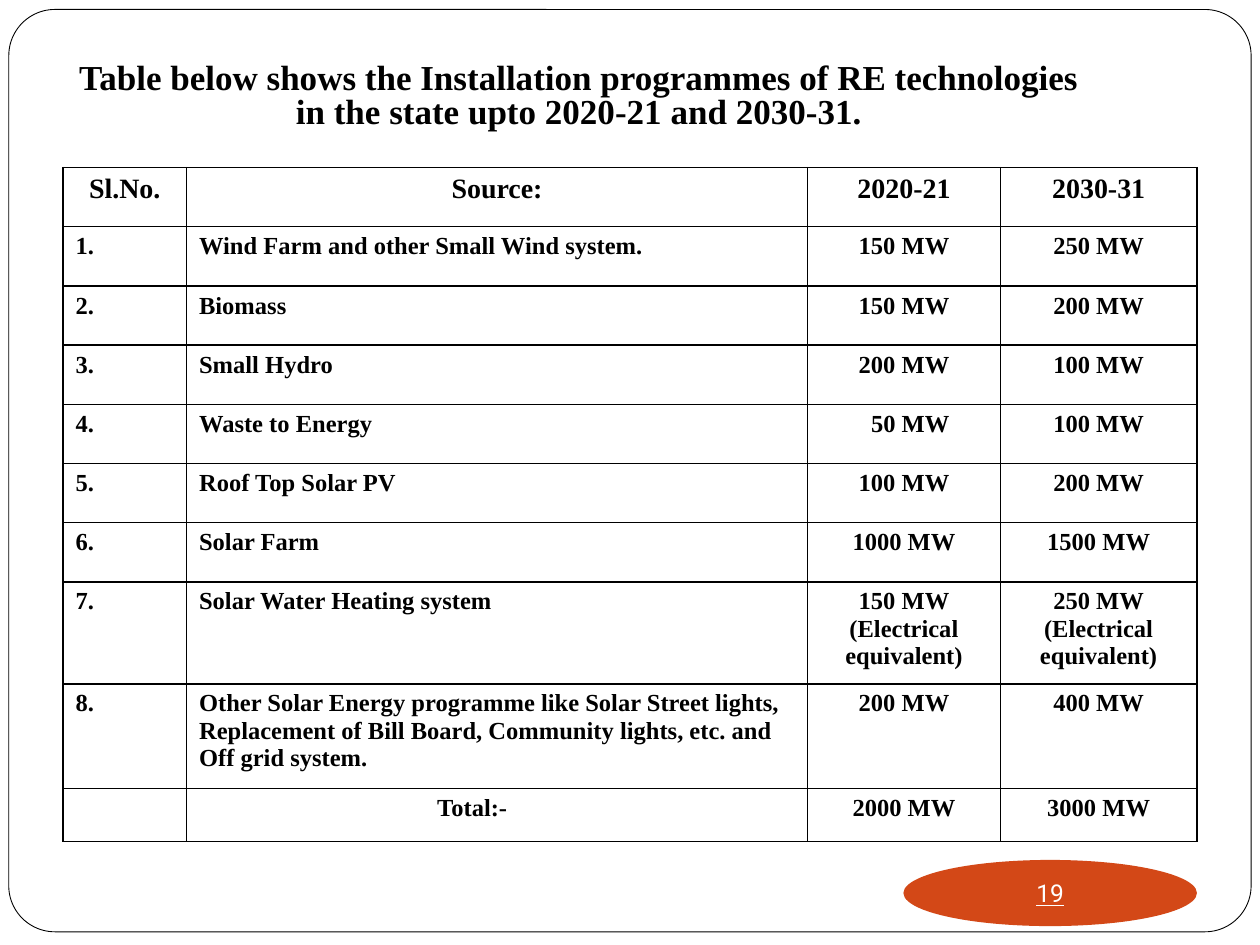
from dataclasses import dataclass

from lxml.etree import SubElement
from pptx import Presentation
from pptx.dml.color import RGBColor
from pptx.enum.shapes import MSO_SHAPE as Shp
from pptx.enum.text import MSO_ANCHOR as Anchor, PP_ALIGN as Al
from pptx.oxml.ns import qn
from pptx.util import Inches, Pt

W, H = 10, 7.5
COLORS = {"ink": "000000", "paper": "FFFFFF", "badge": "D34817"}
SERIF, SANS = "Times New Roman", "Roboto"
HANG = 0.38  # hanging indent of table text
COL_WIDTHS = [0.98, 4.93, 1.53, 1.56]
ROW_HEIGHTS = [0.47] * 7 + [0.81, 0.83, 0.42]


@dataclass
class Box:
    """A place given as shares of the slide's width and height."""
    x: float
    y: float
    w: float
    h: float

    def emu(self) -> list[int]:
        return [Inches(v) for v in (self.x * W, self.y * H, self.w * W, self.h * H)]


@dataclass
class Entry:
    """Text of one cell, a paragraph per line; shift moves it to the right."""
    text: str
    align: Al = Al.CENTER
    size: int = 14
    shift: float = 0


@dataclass
class Source:
    name: str
    by_2021: str
    by_2031: str
    shift: float = 0


SOURCES = [
    Source("Wind Farm and other Small Wind system.", "150 MW", "250 MW"),
    Source("Biomass", "150 MW", "200 MW"),
    Source("Small Hydro", "200 MW", "100 MW"),
    Source("Waste to Energy", "50 MW", "100 MW", shift=0.1),
    Source("Roof Top Solar PV", "100 MW", "200 MW"),
    Source("Solar Farm", "1000 MW", "1500 MW"),
    Source("Solar Water Heating system",
           "150 MW\n(Electrical\nequivalent)", "250 MW\n(Electrical\nequivalent)"),
    Source("Other Solar Energy programme like Solar Street lights,\n"
           "Replacement of Bill Board, Community lights, etc. and\n"
           "Off grid system.", "200 MW", "400 MW"),
]


def rgb(name: str) -> RGBColor:
    return RGBColor.from_string(COLORS[name])


def add_run(p, text: str, size: int, font: str = SERIF, color: str = "ink", bold: bool = True):
    r = p.add_run()
    r.text = text
    r.font.size, r.font.name, r.font.bold = Pt(size), font, bold
    r.font.color.rgb = rgb(color)
    return r


def add_shape(s, kind: Shp, box: Box, fill: str, line: str | None = None):
    sp = s.shapes.add_shape(kind, *box.emu())
    sp.shadow.inherit = False
    sp.fill.solid()
    sp.fill.fore_color.rgb = rgb(fill)
    if line:
        sp.line.color.rgb, sp.line.width = rgb(line), Pt(0.5)
    else:
        sp.line.fill.background()
    return sp


def set_borders(cell) -> None:
    tcPr = cell._tc.get_or_add_tcPr()
    for i, side in enumerate(("lnL", "lnR", "lnT", "lnB")):
        ln = SubElement(tcPr, qn(f"a:{side}"), w=str(Pt(1)))
        fill = SubElement(ln, qn("a:solidFill"))
        SubElement(fill, qn("a:srgbClr"), val=COLORS["ink"])
        tcPr.insert(i, ln)  # borders come before the fill


def fill_cell(cell, entry: Entry) -> None:
    cell.fill.background()
    set_borders(cell)
    tf = cell.text_frame
    for i, line in enumerate(entry.text.split("\n") if entry.text else []):
        p = tf.add_paragraph() if i else tf.paragraphs[0]
        p.alignment = entry.align
        pPr = p._p.get_or_add_pPr()
        pPr.set("marL", str(Inches(HANG + entry.shift)))
        pPr.set("indent", str(Inches(-HANG)))
        add_run(p, line, entry.size)


def table_rows() -> list[list[Entry]]:
    head = [Entry(t, size=16) for t in ("Sl.No.", "Source:", "2020-21", "2030-31")]
    body = [[Entry(f"{n}.", Al.LEFT), Entry(src.name, Al.LEFT),
             Entry(src.by_2021, shift=src.shift), Entry(src.by_2031)]
            for n, src in enumerate(SOURCES, 1)]
    total = [Entry(""), Entry("Total:-", Al.LEFT, shift=1.89), Entry("2000 MW"), Entry("3000 MW")]
    return [head, *body, total]


def add_programme_table(s, box: Box) -> None:
    rows = table_rows()
    tbl = s.shapes.add_table(len(rows), len(COL_WIDTHS), *box.emu()).table
    tbl.first_row = tbl.horz_banding = False
    for col, width in zip(tbl.columns, COL_WIDTHS):
        col.width = Inches(width)
    for r, (row, height) in enumerate(zip(rows, ROW_HEIGHTS)):
        tbl.rows[r].height = Inches(height)
        for c, entry in enumerate(row):
            fill_cell(tbl.cell(r, c), entry)


def add_title(s, box: Box, text: str) -> None:
    tf = s.shapes.add_textbox(*box.emu()).text_frame
    tf.word_wrap = True
    p = tf.paragraphs[0]
    p.alignment, p.line_spacing = Al.CENTER, 0.8
    add_run(p, text, 20)


def add_page_badge(s, box: Box, number: str) -> None:
    tf = add_shape(s, Shp.OVAL, box, "badge").text_frame
    tf.word_wrap, tf.vertical_anchor = False, Anchor.MIDDLE
    tf.margin_left = tf.margin_right = tf.margin_top = tf.margin_bottom = 0
    p = tf.paragraphs[0]
    p.alignment = Al.CENTER
    add_run(p, number, 14, SANS, "paper", bold=False).font.underline = True


def main() -> None:
    prs = Presentation()
    prs.slide_width, prs.slide_height = Inches(W), Inches(H)
    s = prs.slides.add_slide(prs.slide_layouts[6])

    # Rounded frame around the slide
    frame = add_shape(s, Shp.ROUNDED_RECTANGLE, Box(0.007, 0.01, 0.986, 0.976), "paper", "ink")
    frame.adjustments[0] = 0.05

    # Table, page number and title
    add_programme_table(s, Box(0.05, 1.33 / H, 0.9, sum(ROW_HEIGHTS) / H))
    add_page_badge(s, Box(0.717, 0.91, 0.233, 0.07), "19")
    add_title(s, Box(0.043, 0.061, 0.833, 0.087),
              "Table below shows the Installation programmes of RE technologies "
              "in the state upto 2020-21 and 2030-31.")
    prs.save("out.pptx")


if __name__ == "__main__":
    main()
